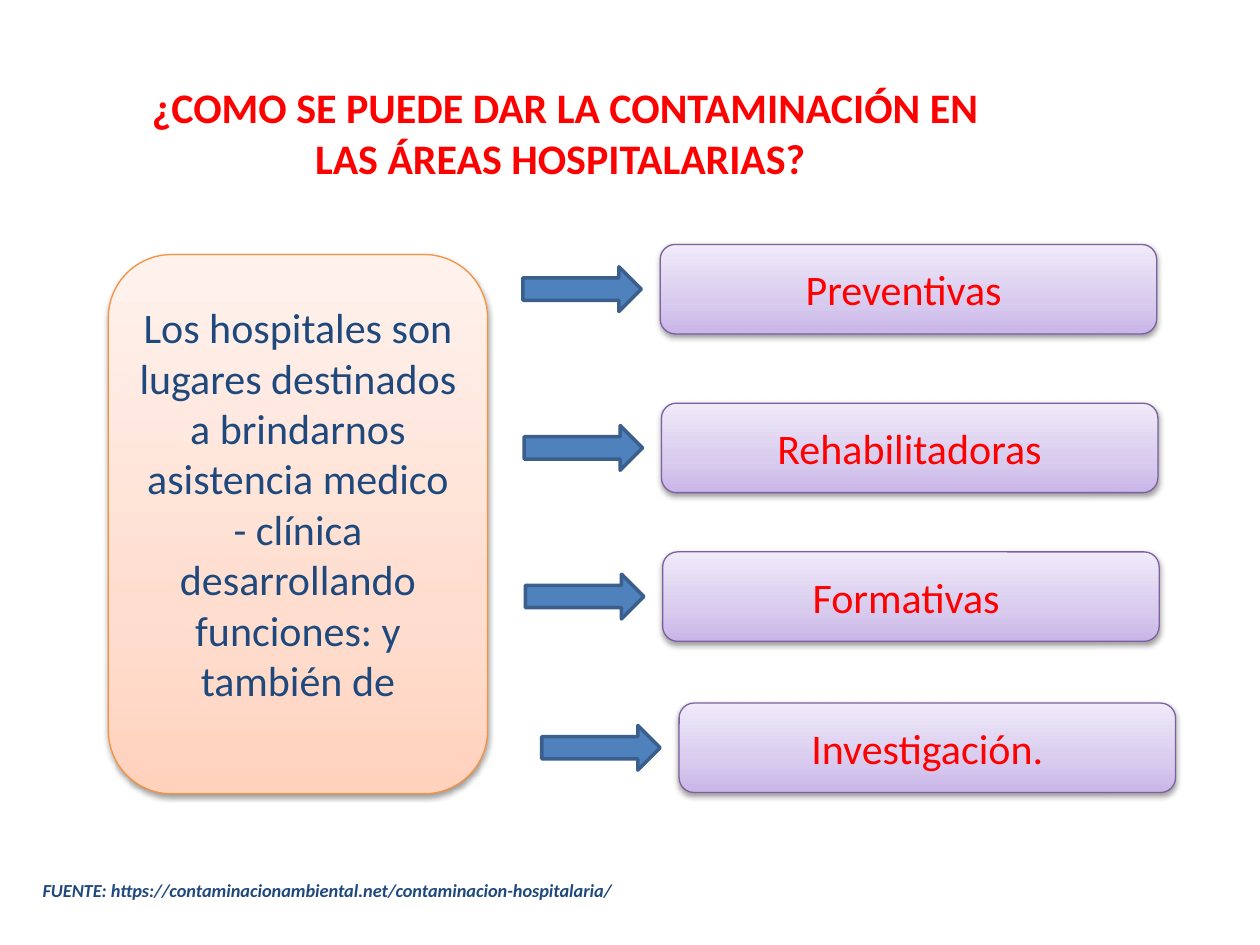
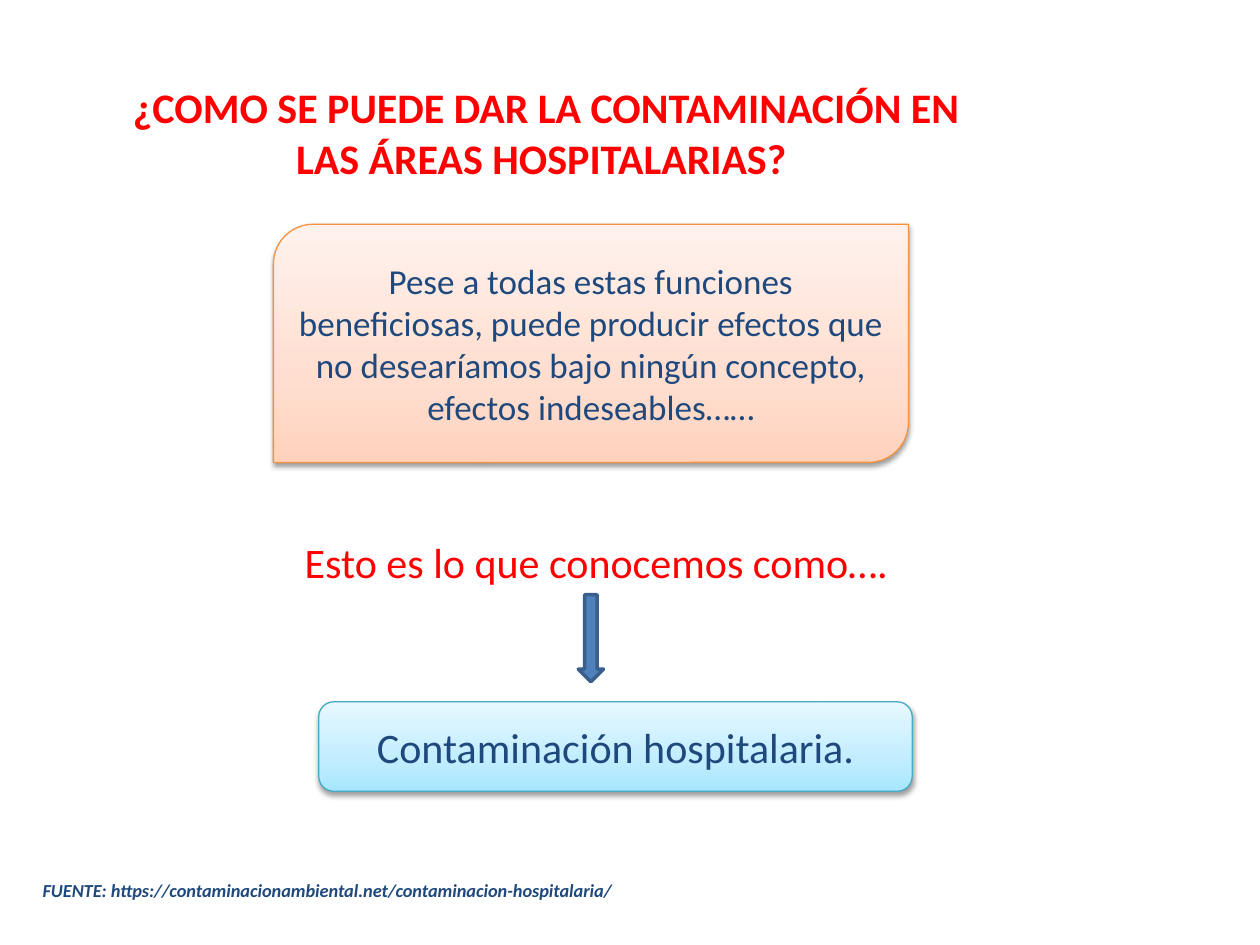
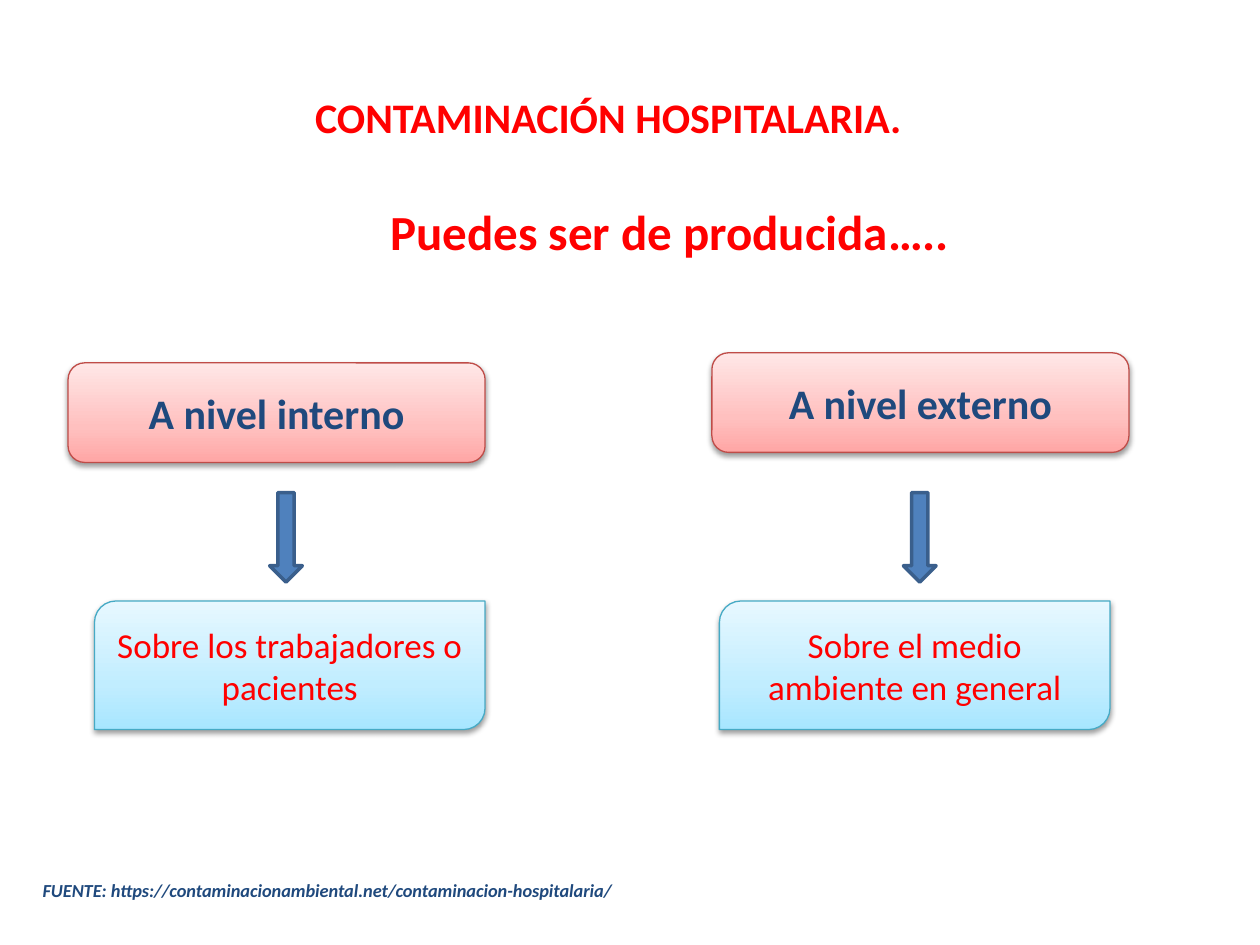
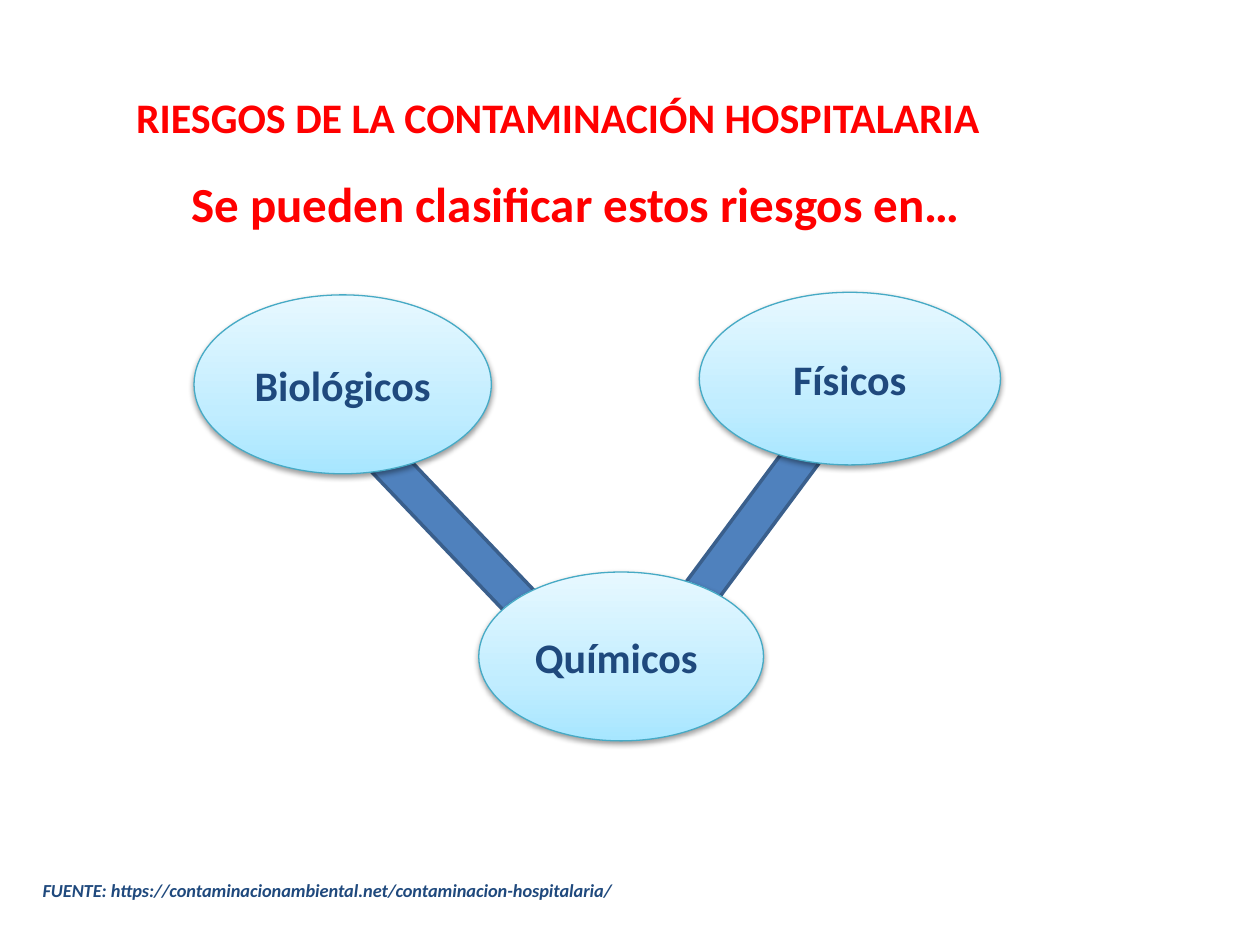
from copy import deepcopy

from pptx import Presentation
from pptx.dml.color import RGBColor
from pptx.enum.shapes import MSO_SHAPE
from pptx.enum.text import MSO_ANCHOR, MSO_AUTO_SIZE, PP_ALIGN
from pptx.oxml import parse_xml
from pptx.oxml.ns import nsdecls, qn
from pptx.util import Inches, Pt

ROUND = MSO_SHAPE.ROUNDED_RECTANGLE
DIAG = MSO_SHAPE.ROUND_2_DIAG_RECTANGLE
OVAL = MSO_SHAPE.OVAL
RIGHT = MSO_SHAPE.RIGHT_ARROW
DOWN = MSO_SHAPE.DOWN_ARROW
LEFT, CENTER = PP_ALIGN.LEFT, PP_ALIGN.CENTER
TOP, MIDDLE = MSO_ANCHOR.TOP, MSO_ANCHOR.MIDDLE
NO_FIT = MSO_AUTO_SIZE.NONE

RED = RGBColor(0xFF, 0x00, 0x00)
NAVY = RGBColor(0x1F, 0x49, 0x7D)
BLUE = RGBColor(0x4F, 0x81, 0xBD)
STEEL = RGBColor(0x3A, 0x5F, 0x8C)

# Each tone: three gradient colours from bottom to top, then the outline
ORANGE = (RGBColor(0xFF, 0xD2, 0xBD), RGBColor(0xFF, 0xDE, 0xD0),
          RGBColor(0xFF, 0xF2, 0xED), RGBColor(0xF6, 0x92, 0x40))
PURPLE = (RGBColor(0xC9, 0xB5, 0xE8), RGBColor(0xD8, 0xCB, 0xEE),
          RGBColor(0xF0, 0xEA, 0xF9), RGBColor(0x7D, 0x60, 0xA0))
AQUA = (RGBColor(0xA7, 0xE6, 0xFF), RGBColor(0xC1, 0xED, 0xFF),
        RGBColor(0xE7, 0xF8, 0xFF), RGBColor(0x46, 0xAA, 0xC5))
ROSE = (RGBColor(0xFF, 0xA6, 0xA5), RGBColor(0xFF, 0xC0, 0xBF),
        RGBColor(0xFF, 0xE7, 0xE7), RGBColor(0xBF, 0x4C, 0x48))
STOPS = (0, 0.35, 1)

FONT = "Calibri"
# Grid of square cells: boxes are (column, row, columns, rows)
COLS, ROWS = 100, 75
WIDTH, HEIGHT = Inches(10), Inches(7.5)

QUESTION = "¿COMO SE PUEDE DAR LA CONTAMINACIÓN EN LAS ÁREAS HOSPITALARIAS? "
SOURCE = ("FUENTE: https://contaminacionambiental.net/"
          "contaminacion-hospitalaria/")
SHADOW = (f'<a:outerShdw {nsdecls("a")} blurRad="40000" dist="20000" '
          'dir="5400000" rotWithShape="0"><a:srgbClr val="000000">'
          '<a:alpha val="38000"/></a:srgbClr></a:outerShdw>')


def grid(box):
    x, y, w, h = box
    return (int(x * WIDTH / COLS), int(y * HEIGHT / ROWS),
            int(w * WIDTH / COLS), int(h * HEIGHT / ROWS))


def write(shape, text, size, color, bold=False, italic=False,
          align=CENTER, anchor=MIDDLE, wrap=True):
    frame = shape.text_frame
    frame.word_wrap = wrap
    frame.auto_size = NO_FIT
    frame.vertical_anchor = anchor
    para = frame.paragraphs[0]
    para.alignment = align
    run = para.add_run()
    run.text = text
    font = run.font
    font.name, font.size, font.color.rgb = FONT, Pt(size), color
    font.bold, font.italic = bold, italic


def label(slide, box, text, size, color=RED, **style):
    shape = slide.shapes.add_textbox(*grid(box))
    write(shape, text, size, color, align=LEFT, anchor=TOP, **style)


def card(slide, kind, box, tone, text, size, color, bold=False):
    """Gradient shape with a soft shadow and centred text."""
    shape = slide.shapes.add_shape(kind, *grid(box))
    shape.fill.gradient()
    stops = shape._element.spPr.find(qn("a:gradFill")).find(qn("a:gsLst"))
    stops.append(deepcopy(stops[0]))
    for stop, place, shade in zip(shape.fill.gradient_stops, STOPS, tone):
        stop.position, stop.color.rgb = place, shade
    shape.fill.gradient_angle = 90
    shape.line.color.rgb = tone[-1]
    shape.line.width = Pt(0.75)
    shape.shadow.inherit = False
    effects = shape._element.spPr.find(qn("a:effectLst"))
    effects.append(parse_xml(SHADOW))
    write(shape, text, size, color, bold)
    return shape


def arrow(slide, kind, box, turn=0):
    shape = slide.shapes.add_shape(kind, *grid(box))
    shape.rotation = turn
    shape.fill.solid()
    shape.fill.fore_color.rgb = BLUE
    shape.line.color.rgb = STEEL
    shape.line.width = Pt(2)
    shape.shadow.inherit = False


def start(deck, box, title, align=CENTER, wrap=True):
    """New slide with its title and the source line."""
    slide = deck.slides.add_slide(deck.slide_layouts[5])
    head = slide.shapes.title
    head.left, head.top, head.width, head.height = grid(box)
    write(head, title, 24, RED, True, align=align, anchor=TOP, wrap=wrap)
    label(slide, (2.4, 69.3, 93.6, 2.8), SOURCE, 10.5, NAVY,
          bold=True, italic=True)
    return slide


def role(slide, box, text):
    """Arrow on the left, purple card on the right."""
    x, y, w, h = box
    arrow(slide, RIGHT, (x, y + h / 4, 9.4, h / 2))
    card(slide, ROUND, (x + 10.9, y, w - 10.9, h), PURPLE, text, 24, RED)


def level(slide, top, stem, base, head, text):
    """Heading card, arrow and result card from top to bottom."""
    card(slide, ROUND, top, ROSE, head, 24, NAVY, True)
    arrow(slide, DOWN, stem)
    card(slide, DIAG, base, AQUA, text, 20, RED)


def roles(deck):
    slide = start(deck, (9.8, 6, 70.1, 9.1), QUESTION)
    intro = card(slide, ROUND, (8.6, 20.2, 30.1, 42.8), ORANGE,
                 "Los hospitales son lugares destinados a brindarnos "
                 "asistencia medico - clínica desarrollando funciones: "
                 "y también de", 24, NAVY)
    intro.text_frame.margin_bottom = Inches(0.38)
    for x, y, text in ((41.5, 19.4, "Preventivas "),
                       (41.6, 32, "Rehabilitadoras"),
                       (41.7, 43.8, "Formativas "),
                       (43, 55.8, "Investigación.")):
        role(slide, (x, y, 50.3, 7.1), text)


def effects(deck):
    slide = start(deck, (8.3, 6, 70.1, 9.1), QUESTION)
    card(slide, DIAG, (21.7, 17.8, 50.4, 18.9), ORANGE,
         "Pese a todas estas funciones beneficiosas, puede producir "
         "efectos que no desearíamos bajo ningún concepto, efectos "
         "indeseables……", 20, NAVY)
    label(slide, (23.2, 42.1, 49.5, 5),
          "Esto es lo que conocemos como….", 24, wrap=False)
    arrow(slide, DOWN, (45.9, 47.2, 2, 6.9))
    card(slide, ROUND, (25.3, 55.7, 47.1, 7.1), AQUA,
         "Contaminación hospitalaria.", 24, NAVY)


def levels(deck):
    slide = start(deck, (24, 6.8, 49, 5), "CONTAMINACIÓN HOSPITALARIA.",
                  LEFT, False)
    label(slide, (30, 15.5, 46.9, 5.7), "Puedes ser de producida…..", 28,
          bold=True, wrap=False)
    level(slide, (5.4, 28.8, 33.1, 7.9), (21.4, 39.1, 2.6, 7.1),
          (7.5, 47.7, 31, 10.2), "A nivel interno",
          "Sobre los trabajadores o pacientes")
    level(slide, (56.5, 28, 33.1, 7.9), (71.7, 39.1, 2.6, 7.1),
          (57.1, 47.7, 31, 10.2), "A nivel externo",
          "Sobre el medio ambiente en general")


def risks(deck):
    slide = start(deck, (9.8, 6.8, 69.6, 5),
                  "RIESGOS DE LA CONTAMINACIÓN HOSPITALARIA", LEFT, False)
    label(slide, (14.2, 13.3, 65, 5.7),
          "Se pueden clasificar estos riesgos en…", 28,
          bold=True, wrap=False)
    # Links lie behind the ovals
    arrow(slide, DOWN, (56.9, 29.3, 5.7, 24.3), 36.6)
    arrow(slide, DOWN, (34.8, 31.8, 5.7, 24.3), 316.4)
    for box, text in (((15.4, 23.4, 23.6, 14.2), "Biológicos"),
                      ((55.5, 23.2, 23.9, 13.7), "Físicos"),
                      ((38, 45.4, 22.6, 13.4), "Químicos ")):
        card(slide, OVAL, box, AQUA, text, 24, NAVY, True)


def main():
    deck = Presentation()
    deck.slide_width, deck.slide_height = WIDTH, HEIGHT
    for build in (roles, effects, levels, risks):
        build(deck)
    deck.save("out.pptx")


if __name__ == "__main__":
    main()
